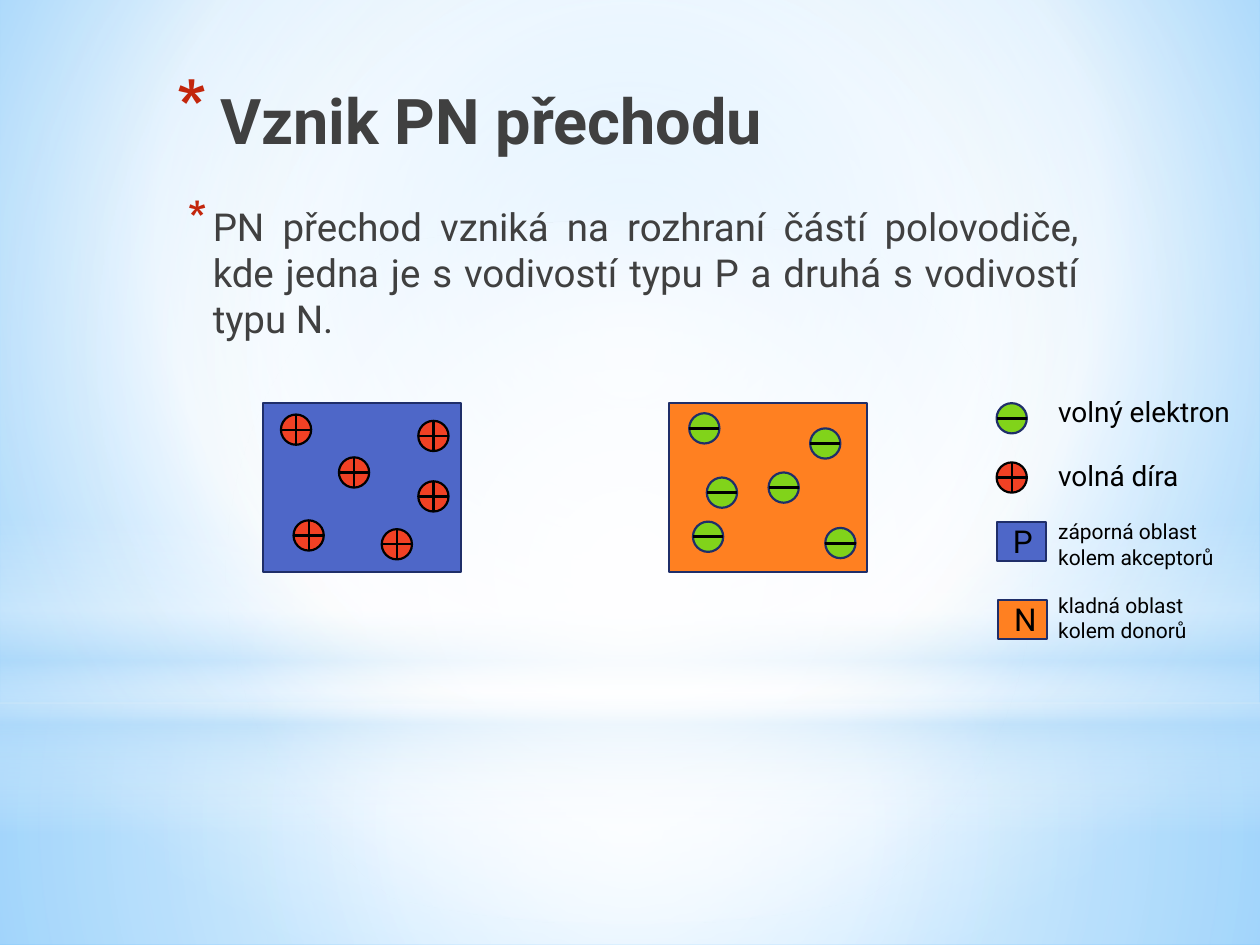
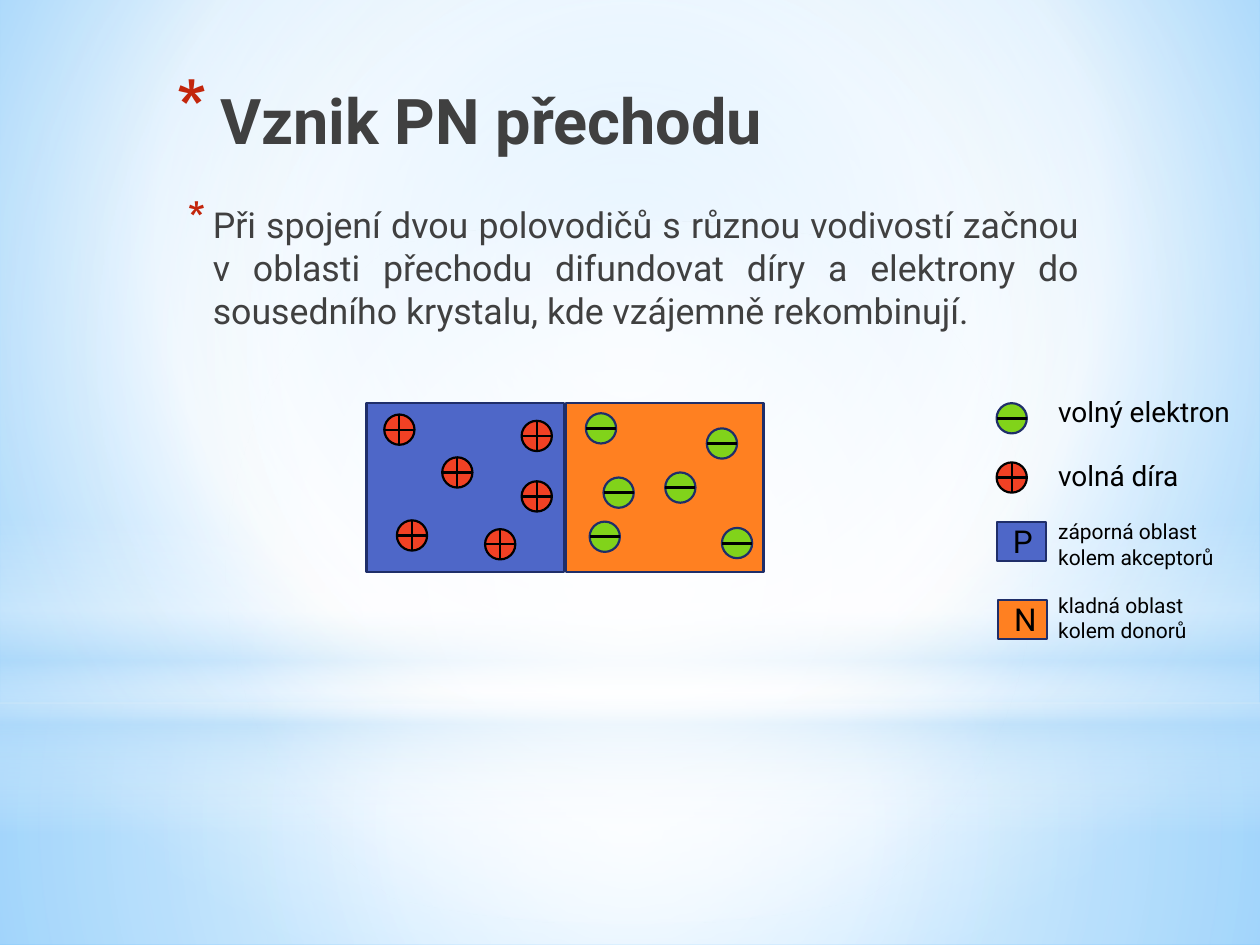
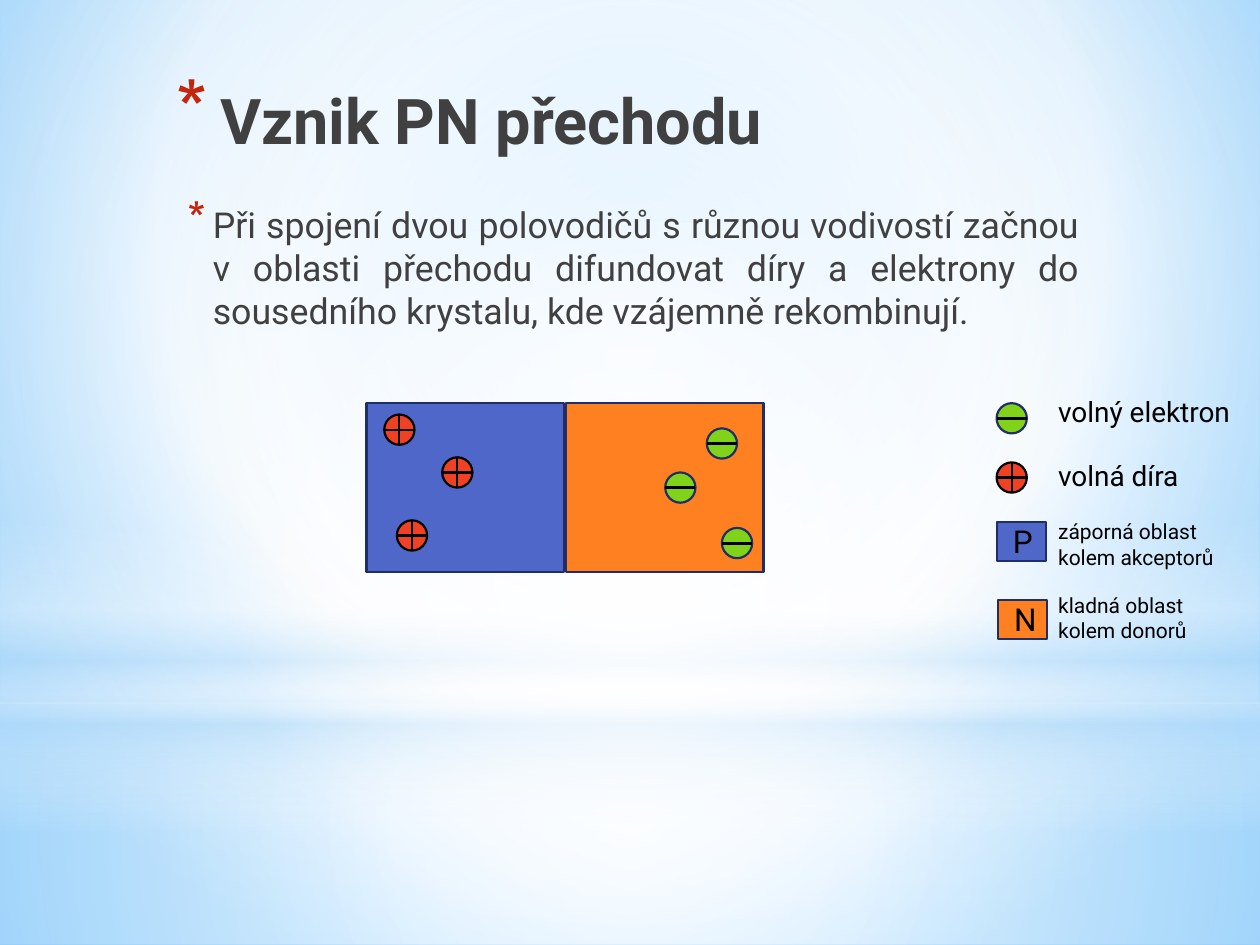
"""Build three slides on how a PN junction forms."""
from lxml import etree
from pptx import Presentation
from pptx import util as u
from pptx.dml import color as dml
from pptx.enum import shapes, text
from pptx.oxml import parse_xml
from pptx.oxml.ns import nsdecls, qn

COLORS = {
    "black": "000000", "white": "FFFFFF", "text": "404040", "navy": "212745",
    "bullet": "C3260C", "outline": "1F2E69", "p_type": "4E67C8", "n_type": "FF8021",
    "hole": "F14124", "electron": "81D31A", "haze": "B4DCFA", "sky": "9ED5FF", "deep_sky": "5BB9FF",
}
FONT = "Roboto"
CENTER = (50, 50, 50, 50)
CHARGE_SIZE = 0.24
BLOCK_SIZE = (1.57, 1.34)
BLOCK_TOP = 3.2
HOLES = [(0.24, 0.93), (0.6, 0.43), (0.14, 0.09), (1.23, 0.14), (1.23, 0.62), (0.94, 1.0)]
ELECTRONS = [(1.24, 0.99), (1.12, 0.2), (0.79, 0.55), (0.3, 0.59), (0.19, 0.94), (0.16, 0.08)]
TITLE = "Vznik PN přechodu"
INTRO = ("PN přechod vzniká na rozhraní částí polovodiče, kde jedna je s vodivostí typu P "
         "a druhá s vodivostí typu N.")
DIFFUSION = ("Při spojení dvou polovodičů s různou vodivostí začnou v oblasti přechodu difundovat "
             "díry a elektrony do sousedního krystalu, kde vzájemně rekombinují.")
SLIDES = [
    {"body": INTRO, "size": 22, "p_left": 2.09, "n_left": 5.31, "charges": 6},
    {"body": DIFFUSION, "size": 20.4, "p_left": 2.91, "n_left": 4.49, "charges": 6},
    {"body": DIFFUSION, "size": 20.4, "p_left": 2.91, "n_left": 4.49, "charges": 3},
]


def rgb(name):
    """Return the named colour."""
    return dml.RGBColor.from_string(COLORS[name])


def set_gradient(fill, holder, stops, focus=None):
    """Give a fill stops of (position, colour, opacity), radial around focus or else vertical."""
    fill.gradient()
    gradient = next(holder.iter(qn("a:gradFill")))
    gradient[:] = []
    stop_xml = "".join(
        f'<a:gs pos="{position * 1000}"><a:srgbClr val="{COLORS[name]}">'
        f'<a:alpha val="{opacity * 1000}"/></a:srgbClr></a:gs>'
        for position, name, opacity in stops)
    gradient.append(parse_xml(f'<a:gsLst {nsdecls("a")}>{stop_xml}</a:gsLst>'))
    if focus:
        edges = " ".join(f'{side}="{value * 1000}"' for side, value in zip("ltrb", focus))
        direction = f'<a:path {nsdecls("a")} path="circle"><a:fillToRect {edges}/></a:path>'
    else:
        direction = f'<a:lin {nsdecls("a")} ang="5400000" scaled="0"/>'
    gradient.append(parse_xml(direction))


def add_shape(canvas, kind, box, fill=None, line=None):
    """Add a preset shape without shadow, with an optional solid fill and outline."""
    shape = canvas.shapes.add_shape(kind, *map(u.Inches, box))
    shape.shadow.inherit = False
    if fill:
        shape.fill.solid()
        shape.fill.fore_color.rgb = rgb(fill)
    if line:
        shape.line.color.rgb = rgb(line)
        shape.line.width = u.Pt(1.25)
    else:
        shape.line.fill.background()
    return shape


def add_text(canvas, content, box, size=16, color="black", bold=False, wrap=True):
    """Add a text box with one formatted paragraph and return that paragraph."""
    frame = canvas.shapes.add_textbox(*map(u.Inches, box)).text_frame
    frame.word_wrap = wrap
    paragraph = frame.paragraphs[0]
    run = paragraph.add_run()
    run.text = content
    run.font.name = FONT
    run.font.size = u.Pt(size)
    run.font.bold = bold
    run.font.color.rgb = rgb(color)
    return paragraph


def add_bullet(paragraph, margin, indent, percent):
    """Put a red asterisk before a paragraph."""
    properties = paragraph._p.get_or_add_pPr()
    properties.set("marL", str(u.Inches(margin)))
    properties.set("indent", str(u.Inches(indent)))
    bullet_color = etree.SubElement(properties, qn("a:buClr"))
    etree.SubElement(bullet_color, qn("a:srgbClr"), val=COLORS["bullet"])
    etree.SubElement(properties, qn("a:buSzPct"), val=str(percent * 1000))
    etree.SubElement(properties, qn("a:buChar"), char="*")


def add_hole(canvas, left, top):
    """Add a free hole: a red circle with a plus."""
    add_shape(canvas, shapes.MSO_SHAPE.FLOWCHART_OR, (left, top, CHARGE_SIZE, CHARGE_SIZE),
              "hole", "black")


def add_electron(canvas, left, top):
    """Add a free electron: a green circle with a minus."""
    add_shape(canvas, shapes.MSO_SHAPE.OVAL, (left, top, CHARGE_SIZE, CHARGE_SIZE),
              "electron", "outline")
    middle = top + CHARGE_SIZE / 2
    ends = (left, middle, left + CHARGE_SIZE, middle)
    minus = canvas.shapes.add_connector(shapes.MSO_CONNECTOR.STRAIGHT, *map(u.Inches, ends))
    minus.line.color.rgb = rgb("black")
    minus.line.width = u.Pt(1.75)
    etree.SubElement(minus.element.spPr, qn("a:effectLst"))


def add_block(slide, left, fill, add_charge, offsets):
    """Add a semiconductor block with its free charges."""
    group = slide.shapes.add_group_shape()
    add_shape(group, shapes.MSO_SHAPE.RECTANGLE, (left, BLOCK_TOP, *BLOCK_SIZE), fill, "outline")
    for across, down in offsets:
        add_charge(group, left + across, BLOCK_TOP + down)


def add_legend(slide):
    """Add the key to charges and regions."""
    group = slide.shapes.add_group_shape()
    add_electron(group, 7.91, 3.2)
    add_hole(group, 7.91, 3.67)
    for letter, fill, left, top in (("P", "p_type", 7.91, 4.14), ("N", "n_type", 7.92, 4.76)):
        add_shape(group, shapes.MSO_SHAPE.FLOWCHART_PROCESS, (left, top, 0.39, 0.31), fill, "outline")
        add_text(group, letter, (left + 0.03, top - 0.05, 0.36, 0.4), size=18, wrap=False)
    for label, top, height, size in (
            ("volný elektron", 3.08, 0.37, 16),
            ("volná díra", 3.59, 0.37, 16),
            ("záporná oblast kolem akceptorů", 4.07, 0.5, 12),
            ("kladná oblast kolem donorů", 4.65, 0.5, 12)):
        add_text(group, label, (8.3, top, 1.66, height), size=size)


def add_heading(slide):
    """Add the slide title."""
    paragraph = add_text(slide, TITLE, (1.3, 0.6, 7.12, 1.25), size=36, bold=True)
    set_gradient(paragraph.runs[0].font.fill, paragraph._p,
                 [(0, "black", 100), (40, "text", 100), (100, "navy", 65)])
    add_bullet(paragraph, 0.35, -0.35, 128)


def add_body(slide, content, size):
    """Add the justified explanation."""
    paragraph = add_text(slide, content, (1.34, 1.56, 7.32, 1.1), size=size, color="text")
    paragraph.alignment = text.PP_ALIGN.JUSTIFY
    paragraph.space_before = u.Pt(round(size * 0.2))
    paragraph.space_after = u.Pt(3)
    add_bullet(paragraph, 0.25, -0.2, 130)


def decorate_layout(presentation, layout, slide):
    """Set the master background and move the light bands into the shared layout."""
    master = presentation.slide_master
    set_gradient(master.background.fill, master.element,
                 [(0, "sky", 100), (60, "white", 100), (100, "deep_sky", 100)], (20, 10, 20, 60))
    rectangle, oval = shapes.MSO_SHAPE.RECTANGLE, shapes.MSO_SHAPE.OVAL
    for kind, box, stops, focus in (
            (rectangle, (0, 5.58, 10, 1.92),
             [(0, "white", 91), (37, "white", 76), (100, "haze", 79)], CENTER),
            (rectangle, (0, 0, 10, 5.58),
             [(0, "white", 89), (48, "white", 62), (100, "haze", 79)], CENTER),
            (rectangle, (0, 4.12, 10, 2.5),
             [(0, "white", 0), (29, "white", 30), (45, "haze", 40),
              (55, "white", 26), (65, "haze", 60), (100, "white", 0)], None),
            (oval, (0, 1.75, 10, 5.58), [(0, "white", 100), (56, "white", 0)], CENTER)):
        band = add_shape(slide, kind, box)
        set_gradient(band.fill, band.element, stops, focus)
        layout.shapes.element.append(band.element)


def main():
    """Build and save the presentation."""
    presentation = Presentation()
    presentation.slide_width, presentation.slide_height = u.Inches(10), u.Inches(7.5)
    layout = presentation.slide_layouts[6]
    for content in SLIDES:
        slide = presentation.slides.add_slide(layout)
        if content is SLIDES[0]:
            decorate_layout(presentation, layout, slide)
        count = content["charges"]
        add_block(slide, content["p_left"], "p_type", add_hole, HOLES[:count])
        add_block(slide, content["n_left"], "n_type", add_electron, ELECTRONS[:count])
        add_heading(slide)
        add_body(slide, content["body"], content["size"])
        add_legend(slide)
    presentation.save("out.pptx")


if __name__ == "__main__":
    main()
